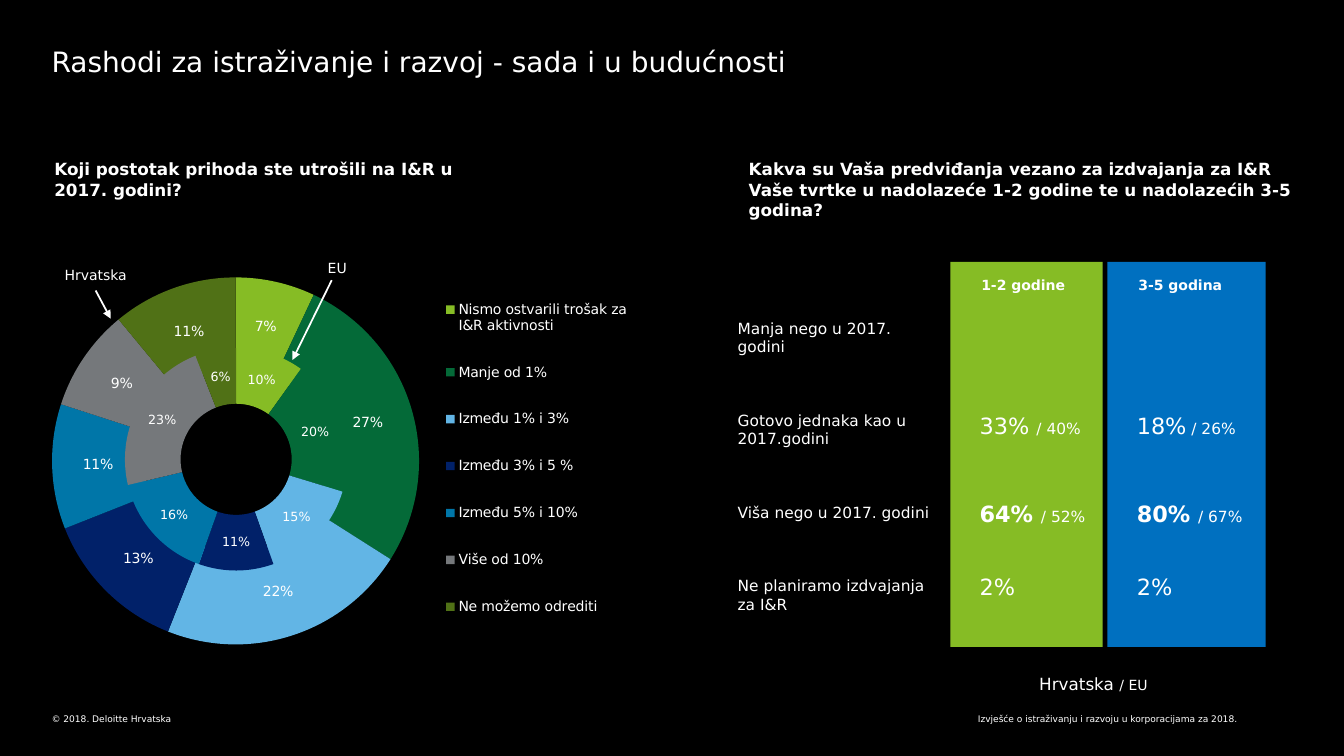
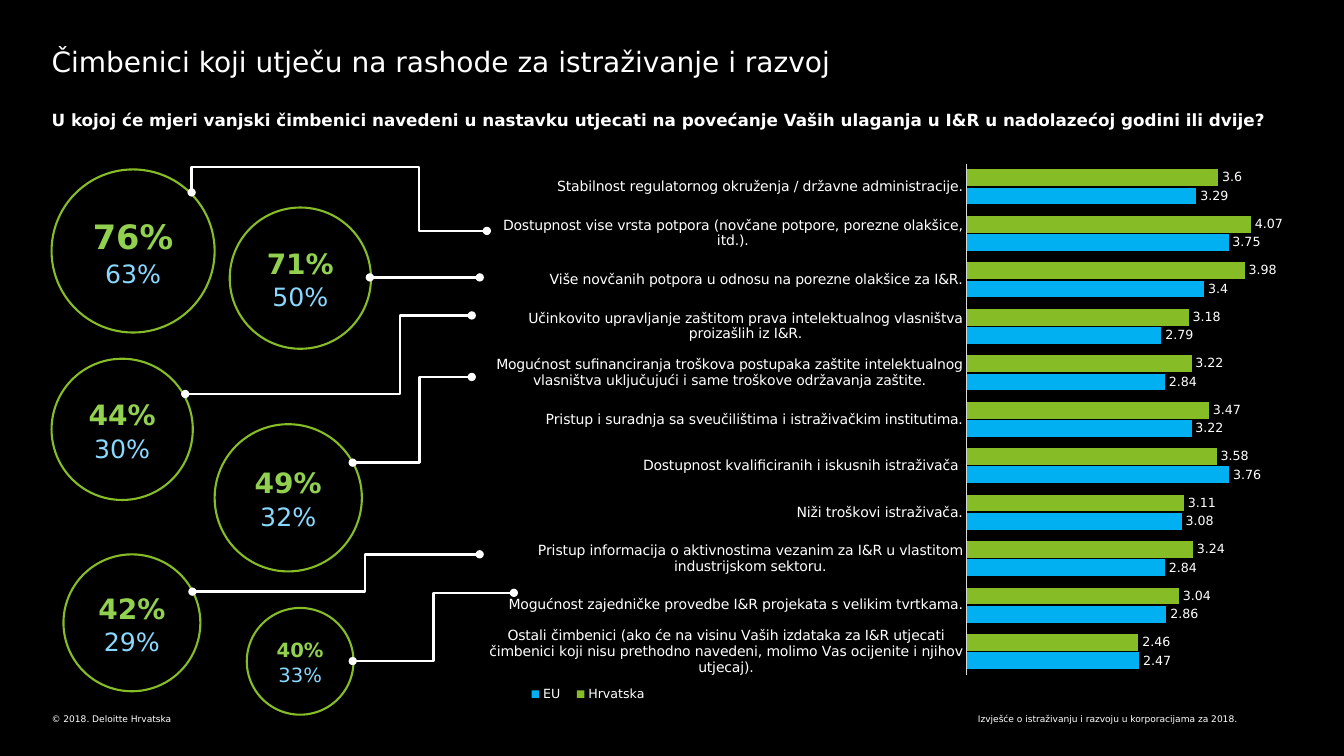
from typing import NamedTuple

from lxml.etree import SubElement
from pptx import Presentation
from pptx.chart.data import CategoryChartData
from pptx.dml.color import RGBColor
from pptx.enum.chart import XL_CHART_TYPE, XL_LABEL_POSITION, XL_LEGEND_POSITION, XL_TICK_MARK
from pptx.enum.shapes import MSO_CONNECTOR, MSO_SHAPE
from pptx.enum.text import MSO_ANCHOR, PP_ALIGN
from pptx.oxml import parse_xml
from pptx.oxml.ns import nsdecls, qn
from pptx.util import Cm, Pt

FONT = "DejaVu Sans"
BLACK = RGBColor(0x00, 0x00, 0x00)
WHITE = RGBColor(0xFF, 0xFF, 0xFF)
GREEN = RGBColor(0x86, 0xBC, 0x25)
BLUE = RGBColor(0x00, 0x70, 0xC0)
SKY = RGBColor(0x00, 0xB0, 0xF0)
AXIS_GREY = RGBColor(0xD9, 0xD9, 0xD9)
LIGHT_GREEN = RGBColor(0x92, 0xD0, 0x50)
LIGHT_BLUE = RGBColor(0x89, 0xD8, 0xFF)
SLICE_COLOURS = [GREEN, RGBColor(0x04, 0x6A, 0x38), RGBColor(0x62, 0xB5, 0xE5),
                 RGBColor(0x01, 0x21, 0x69), RGBColor(0x00, 0x76, 0xA8),
                 RGBColor(0x75, 0x78, 0x7B), RGBColor(0x50, 0x71, 0x16)]

SPENDING = [
    ("Nismo ostvarili trošak za I&R aktivnosti", 0.07, 0.10),
    ("Manje od 1%", 0.27, 0.20),
    ("Između 1% i 3%", 0.22, 0.15),
    ("Između 3% i 5 %", 0.13, 0.11),
    ("Između 5% i 10%", 0.11, 0.16),
    ("Više od 10%", 0.09, 0.23),
    ("Ne možemo odrediti", 0.11, 0.06),
]
OUTLOOK_LABELS = ["Manja nego u 2017. godini", "Gotovo jednaka kao u 2017.godini",
                  "Viša nego u 2017. godini", "Ne planiramo izdvajanja za I&R"]
OUTLOOK_ROWS = [3.78, 5.99, 7.85]
# left, width, colour, heading, (Croatia, EU, bold) for each row
OUTLOOK_COLUMNS = [
    (5.36, 3.84, GREEN, "1-2 godine",
     [("33% ", "/ 40%", False), ("64% ", "/ 52%", True), ("2%", "", False)]),
    (9.32, 3.99, BLUE, "3-5 godina",
     [("18%", " / 26%", False), ("80% ", "/ 67%", True), ("2%", "", False)]),
]
FACTORS = [
    ("Stabilnost regulatornog okruženja / državne administracije.", 3.6, 3.29),
    ("Dostupnost vise vrsta potpora (novčane potpore, porezne olakšice, itd.).", 4.07, 3.75),
    ("Više novčanih potpora u odnosu na porezne olakšice za I&R.", 3.98, 3.4),
    ("Učinkovito upravljanje zaštitom prava intelektualnog vlasništva proizašlih iz I&R.",
     3.18, 2.79),
    ("Mogućnost sufinanciranja troškova postupaka zaštite intelektualnog vlasništva "
     "uključujući i same troškove održavanja zaštite.", 3.22, 2.84),
    ("Pristup i suradnja sa sveučilištima i istraživačkim institutima.", 3.47, 3.22),
    ("Dostupnost kvalificiranih i iskusnih istraživača ", 3.58, 3.76),
    ("Niži troškovi istraživača.", 3.11, 3.08),
    ("Pristup informacija o aktivnostima vezanim za I&R u vlastitom industrijskom sektoru.",
     3.24, 2.84),
    ("Mogućnost zajedničke provedbe I&R projekata s velikim tvrtkama.", 3.04, 2.86),
    ("Ostali čimbenici (ako će na visinu Vaših izdataka za I&R utjecati čimbenici koji nisu "
     "prethodno navedeni, molimo Vas ocijenite i njihov utjecaj).", 2.46, 2.47),
]
# left, top, diameter, (Croatia, size), (EU, size), link start, link end, bend, rise
BUBBLES = [
    (0, 0.05, 4.11, ("76%", 24), ("63%", 18), (3.53, 0.63), (10.97, 1.6), 0.77, 0.64),
    (4.49, 1.01, 3.56, ("71%", 20), ("50%", 18), (8.02, 2.77), (10.79, 2.77), 0.5, 0),
    (0, 4.82, 3.56, ("44%", 20), ("30%", 18), (3.37, 5.71), (10.59, 3.73), 0.75, 0),
    (4.11, 6.47, 3.71, ("49%", 20), ("32%", 18), (7.59, 7.44), (10.59, 5.28), 0.56, 0),
    (0.3, 9.75, 3.45, ("42%", 20), ("29%", 18), (3.55, 10.69), (10.79, 9.75), 0.6, 0),
    (4.92, 11.1, 2.69, ("40%", 14), ("33%", 14), (7.59, 12.44), (11.65, 10.72), 0.5, 0),
]


class Box(NamedTuple):
    """An area of the slide in centimetres."""
    left: float
    top: float
    width: float
    height: float

    def inside(self, left, top, width, height):
        return Box(self.left + left, self.top + top, width, height)

    def point(self, position):
        return self.left + position[0], self.top + position[1]

    def lengths(self):
        return [Cm(value) for value in self]


def style_font(font, size, colour=WHITE, bold=False):
    font.name = FONT
    font.size = Pt(size)
    font.bold = bold
    font.color.rgb = colour


def add_span(para, text, size, colour=WHITE, bold=False):
    span = para.add_run()
    span.text = text
    style_font(span.font, size, colour, bold)


def add_text(page, box, spans, align=PP_ALIGN.LEFT):
    """Place one paragraph; each span is (text, size) or (text, size, colour, bold)."""
    frame = page.shapes.add_textbox(*box.lengths()).text_frame
    frame.word_wrap = True
    frame.margin_left = frame.margin_right = frame.margin_top = frame.margin_bottom = 0
    para = frame.paragraphs[0]
    para.alignment = align
    for span in spans:
        add_span(para, *span)
    return frame


def add_question(page, box, text):
    add_text(page, box, [(text, 12, WHITE, True)])


def add_page(deck, title):
    page = deck.slides.add_slide(deck.slide_layouts[6])
    page.background.fill.solid()
    page.background.fill.fore_color.rgb = BLACK
    add_text(page, Box(17.6, 17.98, 13.59, 0.28),
             [("Izvješće o istraživanju i razvoju u korporacijama za 2018.", 6.5)],
             PP_ALIGN.RIGHT)
    add_text(page, Box(1.3, 17.98, 14.88, 0.28), [("© 2018. Deloitte Hrvatska", 6.5)])
    add_text(page, Box(1.3, 1.12, 31.27, 0.94), [(title, 20)])
    return page


def add_line(page, kind, start, end, width, head=None, tail=None):
    line = page.shapes.add_connector(kind, *[Cm(value) for value in (*start, *end)])
    line.line.color.rgb = WHITE
    line.line.width = Pt(width)
    outline = line.line._get_or_add_ln()
    for tag, ending in (("a:headEnd", head), ("a:tailEnd", tail)):
        if ending:
            SubElement(outline, qn(tag)).set("type", ending)
    SubElement(line._element.spPr, qn("a:effectLst"))
    return line


def add_link(page, start, end, bend, rise):
    """Join two points by a stepped line; a rise makes it leave upwards first."""
    ends = {"width": 1.75, "head": "oval", "tail": "oval"}
    run, drop = end[0] - start[0], end[1] - start[1]
    if not drop:
        add_line(page, MSO_CONNECTOR.STRAIGHT, start, end, **ends)
        return
    guides = [bend]
    if rise:
        guides = [-rise / drop, bend]
        middle, centre = (start[0] + end[0]) / 2, (start[1] + end[1]) / 2
        start = middle + drop / 2, centre - run / 2
        end = middle - drop / 2, centre + run / 2
    line = add_line(page, MSO_CONNECTOR.ELBOW, start, end, **ends)
    properties = line._element.spPr
    geometry = properties.find(qn("a:prstGeom"))
    if rise:
        properties.find(qn("a:xfrm")).set("rot", "16200000")
        geometry.set("prst", "bentConnector4")
    values = geometry.find(qn("a:avLst"))
    for number, guide in enumerate(guides, 1):
        entry = SubElement(values, qn("a:gd"))
        entry.set("name", f"adj{number}")
        entry.set("fmla", f"val {round(guide * 100000)}")


def chart_layout(left, top, width, height, inner=False):
    target = '<c:layoutTarget val="inner"/>' if inner else ""
    sizes = "".join(f'<c:{tag} val="{value}"/>' for tag, value in
                    (("x", left), ("y", top), ("w", width), ("h", height)))
    return parse_xml(f'<c:layout {nsdecls("c")}><c:manualLayout>{target}'
                     f'<c:xMode val="edge"/><c:yMode val="edge"/>{sizes}'
                     "</c:manualLayout></c:layout>")


def add_chart(page, box, kind, categories, series, size):
    chart_data = CategoryChartData()
    chart_data.categories = categories
    for name, values in series:
        chart_data.add_series(name, values)
    chart = page.shapes.add_chart(kind, *box.lengths(), chart_data).chart
    chart.has_title = False
    chart.has_legend = False
    style_font(chart.font, size)
    return chart


def add_legend(chart, position, size, layout):
    chart.has_legend = True
    legend = chart.legend
    legend.position = position
    legend.include_in_layout = False
    style_font(legend.font, size)
    legend._element.find(qn("c:legendPos")).addnext(chart_layout(*layout))


def show_values(series, size):
    labels = series.data_labels
    labels.show_value = True
    labels.show_percentage = False
    style_font(labels.font, size)
    return labels


def add_ring(page, box, categories, name, values, label_size, hole, layout):
    chart = add_chart(page, box, XL_CHART_TYPE.DOUGHNUT, categories, [(name, values)], 10)
    plot = chart.plots[0]
    plot.vary_by_categories = True
    plot._element.find(qn("c:holeSize")).set("val", str(hole))
    plot_area = plot._element.getparent()
    for old in plot_area.findall(qn("c:layout")):
        plot_area.remove(old)
    plot_area.insert(0, chart_layout(*layout, inner=True))
    series = plot.series[0]
    for index, colour in enumerate(SLICE_COLOURS):
        look = series.points[index].format
        look.fill.solid()
        look.fill.fore_color.rgb = colour
        look.line.fill.background()
    labels = show_values(series, label_size)
    labels.number_format = "#,##0%"
    labels.number_format_is_linked = False
    return chart


def add_spending(page, box):
    add_question(page, box.inside(0.58, 0, 11.2, 1.02),
                 "Koji postotak prihoda ste utrošili na I&R u 2017. godini?")
    categories, croatia, union = zip(*SPENDING)
    outer = add_ring(page, box.inside(0, 2.03, 15.34, 11.13), categories, "Hrvatska", croatia,
                     10, 75, (0.034, 0.002, 0.603, 0.998))
    add_legend(outer, XL_LEGEND_POSITION.RIGHT, 10, (0.67, 0.07, 0.32, 0.85))
    add_ring(page, box.inside(2.33, 4.63, 5.72, 5.94), categories, "EU", union,
             9, 31, (0.005, 0.019, 0.98, 0.951))
    for name, left, top, start, end in (("Hrvatska", 0.84, 2.7, (1.62, 3.31), (2, 4.02)),
                                        ("EU", 7.47, 2.52, (7.57, 3.05), (6.58, 5.06))):
        add_line(page, MSO_CONNECTOR.STRAIGHT, box.point(start), box.point(end), 1.25,
                 tail="triangle")
        add_text(page, box.inside(left, top, 1.83, 0.43), [(name, 10)])


def add_outlook(page, box):
    add_question(page, box.inside(0.28, 0, 13.79, 1.02),
                 "Kakva su Vaša predviđanja vezano za izdvajanja za I&R Vaše tvrtke "
                 "u nadolazeće 1-2 godine te u nadolazećih 3-5 godina?")
    frame = add_text(page, box.inside(0, 4.02, 4.9, 6.48), [(OUTLOOK_LABELS[0], 11)])
    for label in OUTLOOK_LABELS[1:]:
        para = frame.add_paragraph()
        para.space_before = Pt(39.4)
        add_span(para, label, 11)
    for left, width, colour, heading, rows in OUTLOOK_COLUMNS:
        column = box.inside(left, 2.59, width, 9.7)
        bar = page.shapes.add_shape(MSO_SHAPE.RECTANGLE, *column.lengths())
        bar.shadow.inherit = False
        bar.fill.solid()
        bar.fill.fore_color.rgb = colour
        bar.line.fill.background()
        add_text(page, column.inside(0.78, 0.36, 3, 0.43), [(heading, 10, WHITE, True)])
        for top, (croatia, union, bold) in zip(OUTLOOK_ROWS, rows):
            spans = [(croatia, 16, WHITE, bold)] + ([(union, 11)] if union else [])
            add_text(page, column.inside(0.74, top, 3.1, 0.68), spans)
    add_text(page, box.inside(7.6, 12.96, 3.43, 0.51), [("Hrvatska ", 12), ("/ EU", 10)])


def add_factor_chart(page, box):
    categories, croatia, union = zip(*FACTORS)
    chart = add_chart(page, box, XL_CHART_TYPE.BAR_CLUSTERED, categories,
                      [("Hrvatska", croatia), ("EU", union)], 9)
    add_legend(chart, XL_LEGEND_POSITION.BOTTOM, 9, (0.04, 0.94, 0.17, 0.04))
    plot = chart.plots[0]
    plot.vary_by_categories = False
    plot.gap_width = 68
    plot.overlap = -9
    for series, colour in zip(plot.series, (GREEN, SKY)):
        series.format.fill.solid()
        series.format.fill.fore_color.rgb = colour
        show_values(series, 9).position = XL_LABEL_POSITION.OUTSIDE_END
    names = chart.category_axis
    names.reverse_order = True
    names.major_tick_mark = names.minor_tick_mark = XL_TICK_MARK.NONE
    names.format.line.color.rgb = AXIS_GREY
    names.format.line.width = Pt(0.75)
    style_font(names.tick_labels.font, 10)
    scale = chart.value_axis
    scale.minimum_scale, scale.maximum_scale = 0, 4.5
    scale.has_major_gridlines = False
    scale.visible = False


def add_bubbles(page, box):
    for left, top, diameter, croatia, union, start, end, bend, rise in BUBBLES:
        circle = page.shapes.add_shape(
            MSO_SHAPE.OVAL, *box.inside(left, top, diameter, diameter).lengths())
        circle.shadow.inherit = False
        circle.fill.background()
        circle.line.color.rgb = GREEN
        circle.line.width = Pt(1.5)
        frame = circle.text_frame
        frame.word_wrap = True
        frame.vertical_anchor = MSO_ANCHOR.MIDDLE
        frame.margin_left = frame.margin_right = Cm(0.25)
        frame.margin_top = frame.margin_bottom = Cm(0.25)
        for para, share, colour, bold in (
                (frame.paragraphs[0], croatia, LIGHT_GREEN, True),
                (frame.add_paragraph(), union, LIGHT_BLUE, False)):
            para.alignment = PP_ALIGN.CENTER
            para.line_spacing = 1.06
            add_span(para, *share, colour, bold)
        add_link(page, box.point(start), box.point(end), bend, rise)


def main():
    deck = Presentation()
    deck.slide_width, deck.slide_height = Cm(33.87), Cm(19.05)
    page = add_page(deck, "Rashodi za istraživanje i razvoj - sada i u budućnosti")
    add_spending(page, Box(0.79, 4.01, 15.34, 13.16))
    add_outlook(page, Box(18.59, 4.01, 14.07, 13.47))
    page = add_page(deck, "Čimbenici koji utječu na rashode za istraživanje i razvoj")
    add_question(page, Box(1.3, 2.77, 31.27, 0.81),
                 "U kojoj će mjeri vanjski čimbenici navedeni u nastavku utjecati na povećanje "
                 "Vaših ulaganja u I&R u nadolazećoj godini ili dvije?")
    add_factor_chart(page, Box(12.27, 3.84, 20.42, 14.22))
    add_bubbles(page, Box(1.3, 4.22, 11.65, 13.79))
    deck.save("out.pptx")


if __name__ == "__main__":
    main()
